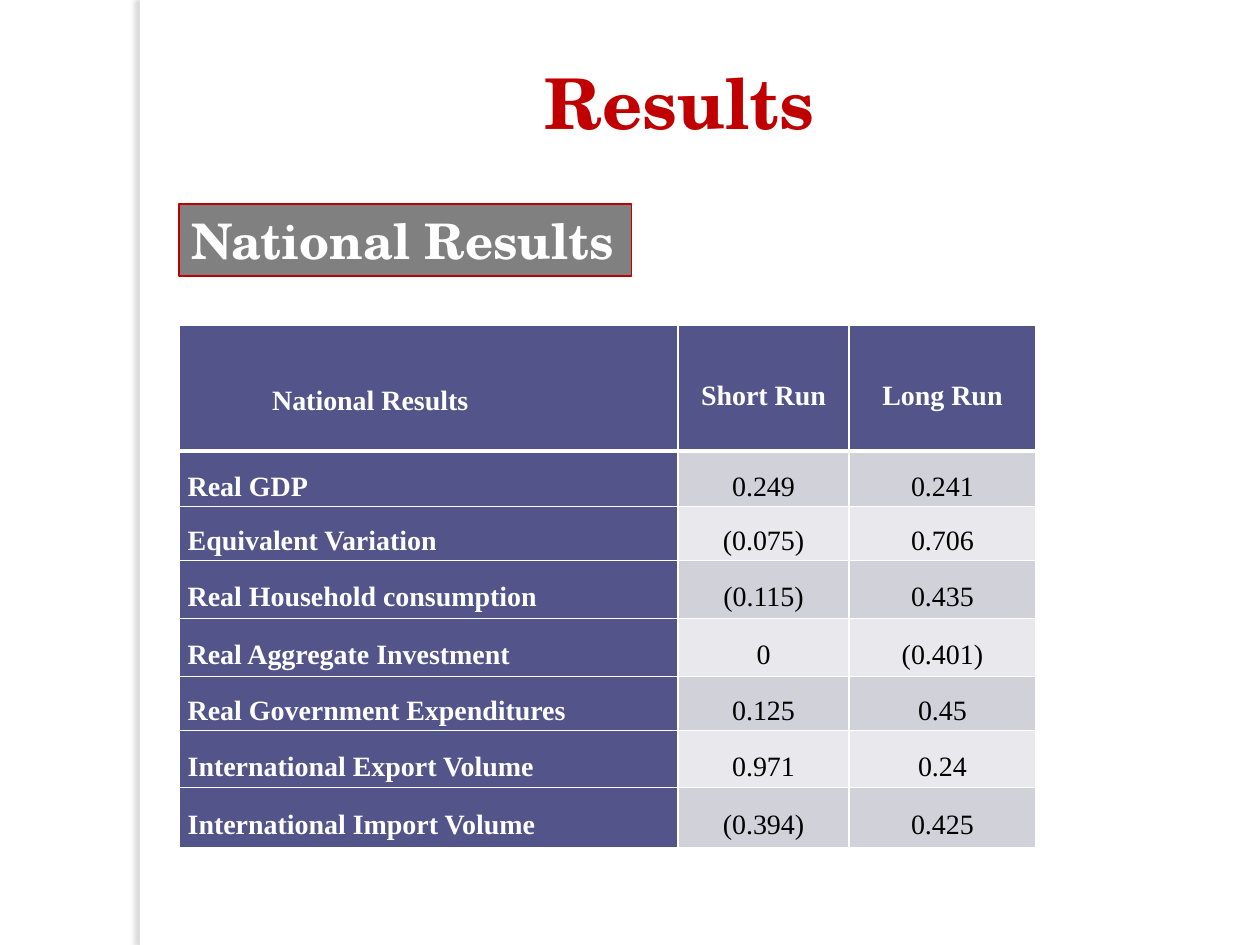
"""Build the slide of national results in the short and long run."""
from lxml.etree import SubElement
from pptx import Presentation
from pptx.dml.color import RGBColor
from pptx.enum.shapes import MSO_SHAPE
from pptx.enum.text import MSO_ANCHOR, MSO_AUTO_SIZE, PP_ALIGN
from pptx.oxml.ns import qn
from pptx.util import Inches, Pt

WHITE = RGBColor(0xFF, 0xFF, 0xFF)
BLACK = RGBColor(0, 0, 0)
RED = RGBColor(0xC0, 0, 0)
GRAY = RGBColor(0x80, 0x80, 0x80)
INDIGO = RGBColor(0x53, 0x54, 0x8A)
BANDS = RGBColor(0xE9, 0xE9, 0xED), RGBColor(0xD1, 0xD1, 0xDA)
HEADING_FONT, TABLE_FONT = "TeX Gyre Schola", "Times New Roman"

TITLE = "Results"
SUBTITLE = "National Results"
RESULTS = [
    ("National Results", "Short Run", "Long Run"),
    ("Real GDP", "0.249", "0.241"),
    ("Equivalent Variation", "(0.075)", "0.706"),
    ("Real Household consumption", "(0.115)", "0.435"),
    ("Real Aggregate Investment", "0", "(0.401)"),
    ("Real Government Expenditures", "0.125", "0.45"),
    ("International Export Volume", "0.971", "0.24"),
    ("International Import Volume", "(0.394)", "0.425"),
]
COLUMN_WIDTHS = 3.96, 1.36, 1.48
ROW_HEIGHTS = 1, 0.44, 0.43, 0.46, 0.46, 0.43, 0.45, 0.48
LEFT = 1.42


def add_span(paragraph, text, font, size, color, bold=True):
    span = paragraph.add_run()
    span.text = text
    span.font.name = font
    span.font.size = Pt(size)
    span.font.bold = bold
    span.font.color.rgb = color


def add_heading(box, text, size, color):
    frame = box.text_frame
    frame.word_wrap = False
    frame.auto_size = MSO_AUTO_SIZE.SHAPE_TO_FIT_TEXT
    paragraph = frame.paragraphs[0]
    paragraph.alignment = PP_ALIGN.LEFT
    paragraph.space_before = paragraph.space_after = Pt(6)
    add_span(paragraph, text, HEADING_FONT, size, color)


def add_rectangle(page, left, top, width, height, fill):
    box = page.shapes.add_shape(
        MSO_SHAPE.RECTANGLE, Inches(left), Inches(top), Inches(width), Inches(height))
    box.shadow.inherit = False
    box.fill.solid()
    box.fill.fore_color.rgb = fill
    box.line.fill.background()
    return box


def add_side_strip(page):
    strip = add_rectangle(page, 1.11, 0, 0.08, 7.5, WHITE)
    effects = strip._element.spPr.find(qn("a:effectLst"))
    shadow = SubElement(effects, qn("a:outerShdw"), blurRad=str(Pt(3)),
                        dist=str(Pt(3)), dir=str(180 * 60000), rotWithShape="0")
    color = SubElement(shadow, qn("a:srgbClr"), val="6E6E6E")
    SubElement(color, qn("a:alpha"), val="25000")


def set_borders(cell, bottom):
    properties = cell._tc.get_or_add_tcPr()
    widths = {"a:lnL": 1, "a:lnR": 1, "a:lnT": 1, "a:lnB": bottom}
    for position, (side, width) in enumerate(widths.items()):
        line = properties.makeelement(qn(side), {"w": str(Pt(width))})
        fill = SubElement(line, qn("a:solidFill"))
        SubElement(fill, qn("a:srgbClr"), val=str(WHITE))
        properties.insert(position, line)


def fill_cell(cell, text, row, column):
    heading = row == 0 or column == 0
    cell.margin_left = cell.margin_right = Inches(0.07)
    cell.margin_top = cell.margin_bottom = 0
    cell.vertical_anchor = MSO_ANCHOR.MIDDLE
    cell.fill.solid()
    cell.fill.fore_color.rgb = INDIGO if heading else BANDS[row % 2]
    set_borders(cell, 3 if row == 0 else 1)
    paragraph = cell.text_frame.paragraphs[0]
    paragraph.line_spacing = 1.5
    paragraph.alignment = PP_ALIGN.CENTER if column else PP_ALIGN.LEFT
    add_span(paragraph, text, TABLE_FONT, 16, WHITE if heading else BLACK, heading)


def add_results_table(page):
    table = page.shapes.add_table(
        len(RESULTS), len(COLUMN_WIDTHS), Inches(LEFT), Inches(2.58),
        Inches(sum(COLUMN_WIDTHS)), Inches(sum(ROW_HEIGHTS))).table
    for column, width in zip(table.columns, COLUMN_WIDTHS):
        column.width = Inches(width)
    for row, height in zip(table.rows, ROW_HEIGHTS):
        row.height = Inches(height)
    for row, texts in enumerate(RESULTS):
        for column, text in enumerate(texts):
            fill_cell(table.cell(row, column), text, row, column)
    corner = table.cell(0, 0)
    corner.vertical_anchor = MSO_ANCHOR.TOP
    corner.margin_top, corner.margin_left = Inches(0.36), Inches(0.74)


def main():
    deck = Presentation()
    deck.slide_width, deck.slide_height = Inches(10), Inches(7.5)
    page = deck.slides.add_slide(deck.slide_layouts[6])
    add_side_strip(page)
    title = page.shapes.add_textbox(Inches(4.22), Inches(0.42), Inches(2.36), Inches(0.77))
    add_heading(title, TITLE, 40, RED)
    subtitle = add_rectangle(page, LEFT, 1.62, 3.59, 0.57, GRAY)
    subtitle.line.color.rgb = RED
    subtitle.line.width = Pt(0.75)
    add_heading(subtitle, SUBTITLE, 28, WHITE)
    add_results_table(page)
    deck.save("out.pptx")


if __name__ == "__main__":
    main()
